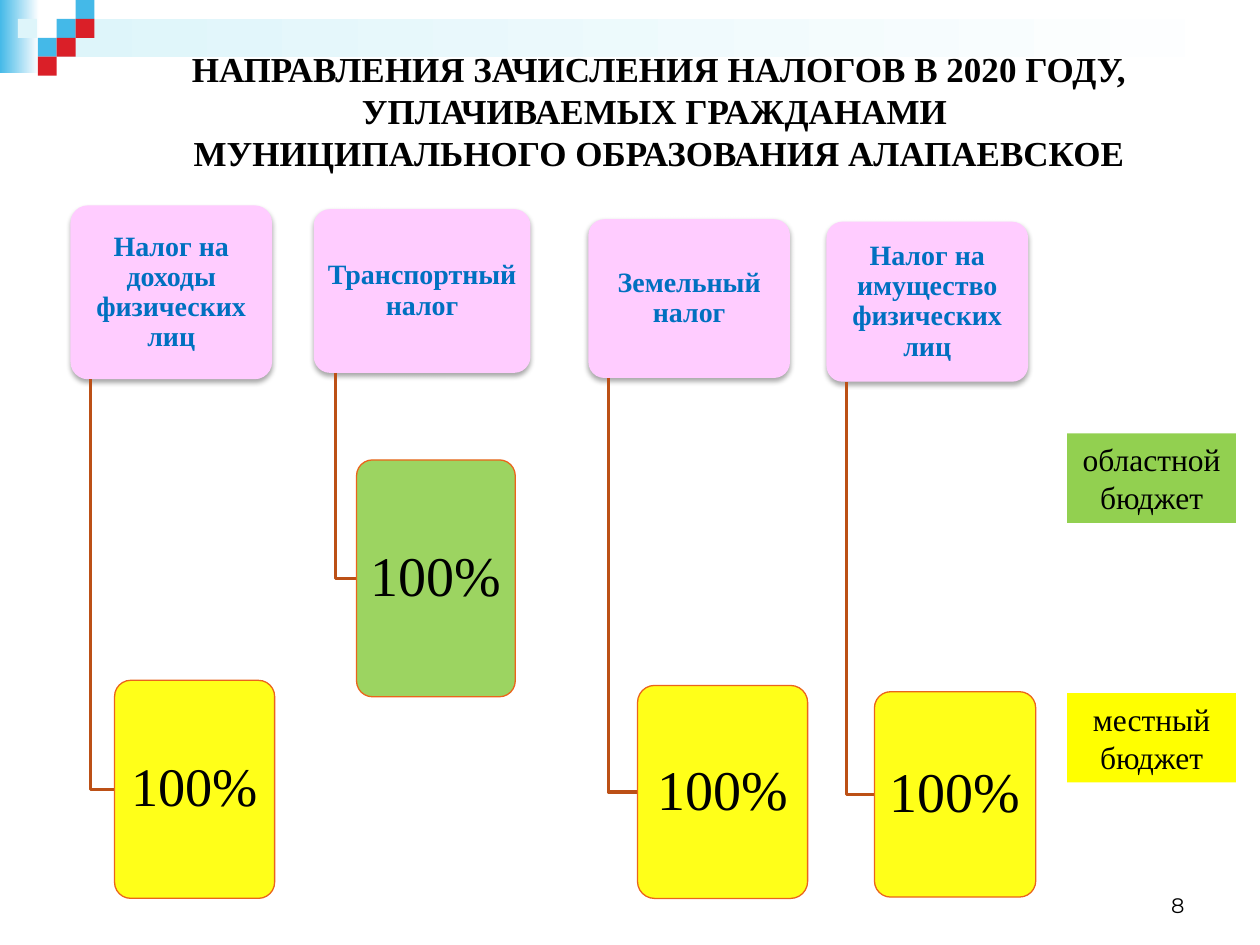
import pptx
import pptx.dml.color
import pptx.enum.shapes
import pptx.enum.text
import pptx.oxml
import pptx.oxml.ns
import pptx.util
from dataclasses import dataclass

SHAPE = pptx.enum.shapes.MSO_SHAPE
ALIGN = pptx.enum.text.PP_ALIGN
ANCHOR = pptx.enum.text.MSO_ANCHOR
rgb = pptx.dml.color.RGBColor.from_string


@dataclass(frozen=True)
class Theme:
    serif: str = "Times New Roman"
    sans: str = "Montserrat"
    ink: str = "000000"
    white: str = "FFFFFF"
    sky: str = "44B9E8"
    pale: str = "DEF5FA"
    red: str = "DA1F28"
    tax_fill: str = "FFCCFF"
    tax_ink: str = "0070C0"
    link: str = "BC5016"
    border: str = "EB641B"
    regional: str = "92D050"
    local: str = "FFFF00"
    title_size: int = 20
    tax_size: int = 16
    legend_size: int = 18
    number_size: int = 12


theme = Theme()
deck = pptx.Presentation()
deck.slide_width = pptx.util.Inches(10)
deck.slide_height = pptx.util.Inches(7.5)
column = deck.slide_width / 100
row = deck.slide_height / 75
page = deck.slides.add_slide(deck.slide_layouts[6])


def add_box(kind, left, top, width, height, *colors):
    """Place a borderless shape in grid units; two colors make a gradient."""
    box = page.shapes.add_shape(kind, round(left * column), round(top * row),
                                round(width * column), round(height * row))
    box.shadow.inherit = False
    box.line.fill.background()
    if len(colors) == 2:
        box.fill.gradient()
        box.fill.gradient_angle = 0
        for stop, color in zip(box.fill.gradient_stops, colors):
            stop.color.rgb = rgb(color)
    elif colors:
        box.fill.solid()
        box.fill.fore_color.rgb = rgb(colors[0])
    else:
        box.fill.background()
    if kind == SHAPE.ROUNDED_RECTANGLE:
        box.adjustments[0] = 0.1
    return box


def write(box, text, size, color=theme.ink, bold=False, font=theme.serif,
          align=ALIGN.CENTER, anchor=ANCHOR.MIDDLE, spacing=1.0, margin=None):
    frame = box.text_frame
    frame.word_wrap = True
    frame.vertical_anchor = anchor
    if margin is not None:
        frame.margin_left = frame.margin_right = round(margin * column)
        frame.margin_top = frame.margin_bottom = 0
    frame.text = text
    para = frame.paragraphs[0]
    para.alignment = align
    para.line_spacing = spacing
    para.font.name = font
    para.font.size = pptx.util.Pt(size)
    para.font.bold = bold
    para.font.color.rgb = rgb(color)


# Corner decoration: squares sit on a lattice of 1.5 units
add_box(SHAPE.RECTANGLE, 0, 0, 3.1, 5.8, theme.sky, theme.white)
add_box(SHAPE.RECTANGLE, 4.5, 1.5, 95.5, 3, theme.pale, theme.white)
tile = 1.5
for across, down, color in [
    (3, 1, theme.sky), (4, 0, theme.sky), (4, 1, theme.red), (2, 2, theme.sky),
    (0.95, 1, theme.pale), (3, 2, theme.red), (2, 3, theme.red),
]:
    add_box(SHAPE.RECTANGLE, across * tile, down * tile, tile, tile, color)

write(add_box(SHAPE.RECTANGLE, 9.8, 1.3, 85, 15),
      "НАПРАВЛЕНИЯ ЗАЧИСЛЕНИЯ НАЛОГОВ В 2020 ГОДУ, УПЛАЧИВАЕМЫХ ГРАЖДАНАМИ \v"
      "МУНИЦИПАЛЬНОГО ОБРАЗОВАНИЯ АЛАПАЕВСКОЕ", theme.title_size, bold=True)

# Each tax: name, its box, share box, share color, share type size
taxes = [
    ("Налог на доходы физических лиц",
     (5.6, 16.3, 16, 13.8), (9.1, 54, 12.7, 17.3), theme.local, 31),
    ("Транспортный налог",
     (24.9, 16.6, 17.2, 13), (28.3, 36.5, 12.6, 18.8), theme.regional, 32),
    ("Земельный налог",
     (46.7, 17.4, 16, 12.6), (50.6, 54.4, 13.5, 16.9), theme.local, 32),
    ("Налог на имущество физических лиц",
     (65.6, 17.6, 16, 12.7), (69.4, 54.9, 12.8, 16.3), theme.local, 32),
]
for name, tax_area, share_area, color, share_size in taxes:
    tax = add_box(SHAPE.ROUNDED_RECTANGLE, *tax_area, theme.tax_fill)
    effects = tax.shadow._element.find(pptx.oxml.ns.qn("a:effectLst"))
    effects.append(pptx.oxml.parse_xml(
        f'<a:outerShdw {pptx.oxml.ns.nsdecls("a")} blurRad="{pptx.util.Pt(3.1)}" '
        f'dist="{pptx.util.Pt(1.8)}" dir="5400000" rotWithShape="0">'
        f'<a:srgbClr val="{theme.ink}"><a:alpha val="35000"/></a:srgbClr>'
        '</a:outerShdw>'))
    write(tax, name, theme.tax_size, theme.tax_ink, bold=True, spacing=0.9, margin=0)

    left, top, width, height = tax_area
    stem = round((left + width / 10) * column)
    middle = round((share_area[1] + share_area[3] / 2) * row)
    builder = page.shapes.build_freeform(stem, round((top + height) * row))
    builder.add_line_segments(
        [(stem, middle), (round(share_area[0] * column), middle)], close=False)
    link = builder.convert_to_shape()
    link.shadow.inherit = False
    link.fill.background()
    link.line.color.rgb = rgb(theme.link)
    link.line.width = pptx.util.Pt(2)

    share = add_box(SHAPE.ROUNDED_RECTANGLE, *share_area, color)
    share.line.color.rgb = rgb(theme.border)
    share.line.width = pptx.util.Pt(0.75)
    tint = share.fill._xPr.find(".//" + pptx.oxml.ns.qn("a:srgbClr"))
    tint.append(pptx.oxml.parse_xml(
        f'<a:alpha {pptx.oxml.ns.nsdecls("a")} val="90000"/>'))
    write(share, "100%", share_size, spacing=0.9, margin=0.3)

for label, top, color in [("областной бюджет", 34.4, theme.regional),
                          ("местный бюджет", 55, theme.local)]:
    legend = add_box(SHAPE.RECTANGLE, 84.7, top, 13.4, 7.1, color)
    write(legend, label, theme.legend_size)
    legend.text_frame.auto_size = pptx.enum.text.MSO_AUTO_SIZE.SHAPE_TO_FIT_TEXT

write(add_box(SHAPE.RECTANGLE, 71.7, 68.3, 23.3, 5), "8", theme.number_size,
      font=theme.sans, align=ALIGN.RIGHT, anchor=ANCHOR.BOTTOM)

deck.save("out.pptx")
